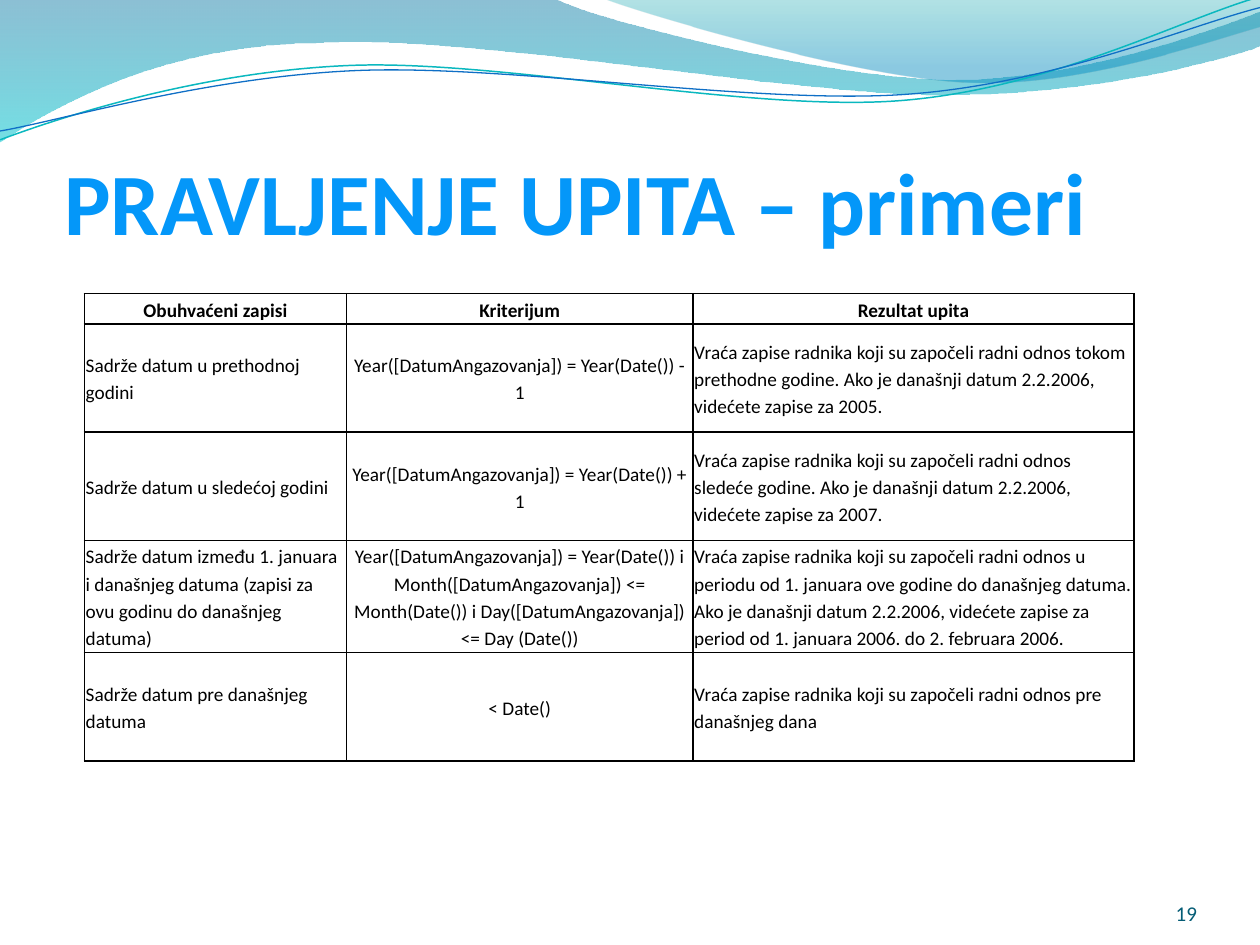
"""Build the slide with query examples under a wave header."""
import math

from lxml import etree
from pptx import Presentation
from pptx.dml.color import RGBColor
from pptx.enum import text
from pptx.oxml import ns
from pptx.util import Inches, Pt

BLACK = RGBColor(0x00, 0x00, 0x00)
TITLE_BLUE = RGBColor(0x04, 0x97, 0xF9)
NUMBER_BLUE = RGBColor(0x04, 0x5C, 0x75)
DEEP_BLUE = RGBColor(0x00, 0x74, 0xA1)
AQUA = RGBColor(0x00, 0xC6, 0xCF)
TEAL = RGBColor(0x00, 0xA1, 0xA9)
SKY = RGBColor(0x00, 0x8B, 0xBF)
LINE_TEAL = RGBColor(0x0A, 0xB8, 0xBF)
LINE_BLUE = RGBColor(0x0F, 0x6F, 0xC6)

FONT = "Calibri"
TITLE = "PRAVLJENJE UPITA – primeri"
NUMBER = "19"
HEADER = ("Obuhvaćeni zapisi", "Kriterijum", "Rezultat upita")
EXAMPLES = [
    ("Sadrže datum u prethodnoj godini",
     "Year([DatumAngazovanja]) = Year(Date()) - 1",
     "Vraća zapise radnika koji su započeli radni odnos tokom prethodne godine. "
     "Ako je današnji datum 2.2.2006, videćete zapise za 2005."),
    ("Sadrže datum u sledećoj godini",
     "Year([DatumAngazovanja]) = Year(Date()) + 1",
     "Vraća zapise radnika koji su započeli radni odnos sledeće godine. "
     "Ako je današnji datum 2.2.2006, videćete zapise za 2007."),
    ("Sadrže datum između 1. januara i današnjeg datuma "
     "(zapisi za ovu godinu do današnjeg datuma)",
     "Year([DatumAngazovanja]) = Year(Date()) i Month([DatumAngazovanja]) <= "
     "Month(Date()) i Day([DatumAngazovanja]) <= Day (Date())",
     "Vraća zapise radnika koji su započeli radni odnos u periodu od 1. januara "
     "ove godine do današnjeg datuma. Ako je današnji datum 2.2.2006, videćete "
     "zapise za period od 1. januara 2006. do 2. februara 2006."),
    ("Sadrže datum pre današnjeg datuma",
     "< Date()",
     "Vraća zapise radnika koji su započeli radni odnos pre današnjeg dana"),
]
COLUMN_WIDTHS = (2.08, 2.75, 3.5)
ROW_HEIGHTS = (0.24, 0.86, 0.86, 0.89, 0.86)

BANDS = [
    ([(0, -0.01), (4.4, -0.01),
      (4.76, 0.17, 6.64, 0.63, 7.58, 0.63), (8.53, 0.63, 9.58, 0.26, 10, 0.09),
      (10.01, 0.36),
      (9.83, 0.44, 8.7, 0.76, 7.46, 0.75), (6.22, 0.75, 3.82, 0.28, 2.57, 0.34),
      (1.29, 0.35, 0.46, 0.83, -0.01, 1.13)],
     [(0, DEEP_BLUE, 45), (1, AQUA, 55)]),
    ([(4.79, -0.01),
      (5.09, 0.11, 6.82, 0.62, 7.69, 0.65), (8.56, 0.69, 9.61, 0.32, 10, 0.21),
      (10, 0)],
     [(0, TEAL, 30), (0.8, SKY, 45)]),
]
STRANDS = [
    ([(0, 1.11), (0.48, 0.93, 1.58, 0.57, 2.77, 0.52),
      (3.95, 0.47, 5.93, 0.89, 7.13, 0.8), (8.33, 0.71, 9.38, 0.15, 9.98, -0.02)],
     LINE_TEAL, 0.85),
    ([(0, 1.04), (0.47, 0.96, 1.64, 0.61, 2.83, 0.56),
      (4.03, 0.51, 5.97, 0.83, 7.17, 0.75), (8.36, 0.67, 9.41, 0.21, 10, 0.06)],
     LINE_BLUE, 0.75),
]
STRAND_TILT = -2.7
STRAND_CENTRE = (4.99, 0.58)


def level(part):
    angle = math.radians(-STRAND_TILT)
    cx, cy = STRAND_CENTRE
    flat = []
    for x, y in zip(part[::2], part[1::2]):
        dx, dy = x - cx, y - cy
        flat += [cx + dx * math.cos(angle) - dy * math.sin(angle),
                 cy + dx * math.sin(angle) + dy * math.cos(angle)]
    return tuple(flat)


def add_wave(slide, outline, close):
    outline = [tuple(map(Inches, part)) for part in outline]
    builder = slide.shapes.build_freeform(*outline[0])
    builder.add_line_segments([part[-2:] for part in outline[1:]], close=close)
    wave = builder.convert_to_shape()
    wave.shadow.inherit = False
    segments = list(wave._element.iter(ns.qn("a:lnTo")))
    for segment, part in zip(segments, outline[1:]):
        if len(part) == 6:
            curve = etree.Element(ns.qn("a:cubicBezTo"))
            for x, y in zip(part[::2], part[1::2]):
                etree.SubElement(curve, ns.qn("a:pt"),
                                 x=str(x - wave.left), y=str(y - wave.top))
            segment.getparent().replace(segment, curve)
    return wave


def add_band(slide, outline, stops):
    band = add_wave(slide, outline, True)
    band.line.fill.background()
    band.fill.gradient()
    band.fill.gradient_angle = 270
    for stop, (position, color, _) in zip(band.fill.gradient_stops, stops):
        stop.position = position
        stop.color.rgb = color
    tints = band.fill._xPr.iter(ns.qn("a:srgbClr"))
    for tint, (_, _, opacity) in zip(tints, stops):
        etree.SubElement(tint, ns.qn("a:alpha"), val=str(opacity * 1000))


def add_strand(slide, outline, color, width):
    strand = add_wave(slide, [level(part) for part in outline], False)
    strand.rotation = STRAND_TILT
    strand.fill.background()
    strand.line.color.rgb = color
    strand.line.width = Pt(width)


def write(paragraph, words, size, color, bold=False, align=text.PP_ALIGN.LEFT):
    paragraph.alignment = align
    run = paragraph.add_run()
    run.text = words
    run.font.name, run.font.size, run.font.bold = FONT, Pt(size), bold
    run.font.color.rgb = color


def add_label(slide, place, words, size, color, top_inset=0, **style):
    frame = slide.shapes.add_textbox(*map(Inches, place)).text_frame
    frame.word_wrap = True
    frame.vertical_anchor = text.MSO_ANCHOR.BOTTOM
    frame.margin_left = frame.margin_right = frame.margin_bottom = 0
    frame.margin_top = Inches(top_inset)
    write(frame.paragraphs[0], words, size, color, **style)


def add_borders(cell):
    properties = cell._tc.get_or_add_tcPr()
    for side in ("lnL", "lnR", "lnT", "lnB"):
        border = etree.SubElement(properties, ns.qn(f"a:{side}"), w=str(Pt(1)))
        fill = etree.SubElement(border, ns.qn("a:solidFill"))
        etree.SubElement(fill, ns.qn("a:srgbClr"), val=str(BLACK))


def add_examples(slide):
    rows = [HEADER, *EXAMPLES]
    table = slide.shapes.add_table(
        len(rows), len(HEADER), Inches(0.67), Inches(2.33),
        Inches(sum(COLUMN_WIDTHS)), Inches(sum(ROW_HEIGHTS))).table
    table.first_row = table.horz_banding = False
    for column, width in zip(table.columns, COLUMN_WIDTHS):
        column.width = Inches(width)
    for r, (row, height) in enumerate(zip(rows, ROW_HEIGHTS)):
        table.rows[r].height = Inches(height)
        for c, words in enumerate(row):
            cell = table.cell(r, c)
            cell.vertical_anchor = text.MSO_ANCHOR.MIDDLE
            cell.margin_left = cell.margin_right = Inches(0.01)
            cell.margin_top = cell.margin_bottom = Inches(0.01)
            add_borders(cell)
            cell.fill.background()
            paragraph = cell.text_frame.paragraphs[0]
            paragraph.line_spacing = 1.15
            paragraph.space_after = Pt(10)
            centred = r == 0 or c == 1
            write(paragraph, words, 11, BLACK, bold=r == 0,
                  align=text.PP_ALIGN.CENTER if centred else text.PP_ALIGN.LEFT)


def main():
    deck = Presentation()
    deck.slide_width, deck.slide_height = Inches(10), Inches(7.5)
    slide = deck.slides.add_slide(deck.slide_layouts[6])
    for outline, stops in BANDS:
        add_band(slide, outline, stops)
    for outline, color, width in STRANDS:
        add_strand(slide, outline, color, width)
    add_label(slide, (0.51, 0.76, 9, 1.25), TITLE, 50, TITLE_BLUE, 0.05, bold=True)
    add_label(slide, (8.67, 6.95, 0.83, 0.4), NUMBER, 12, NUMBER_BLUE,
              align=text.PP_ALIGN.RIGHT)
    add_examples(slide)
    deck.save("out.pptx")


if __name__ == "__main__":
    main()
